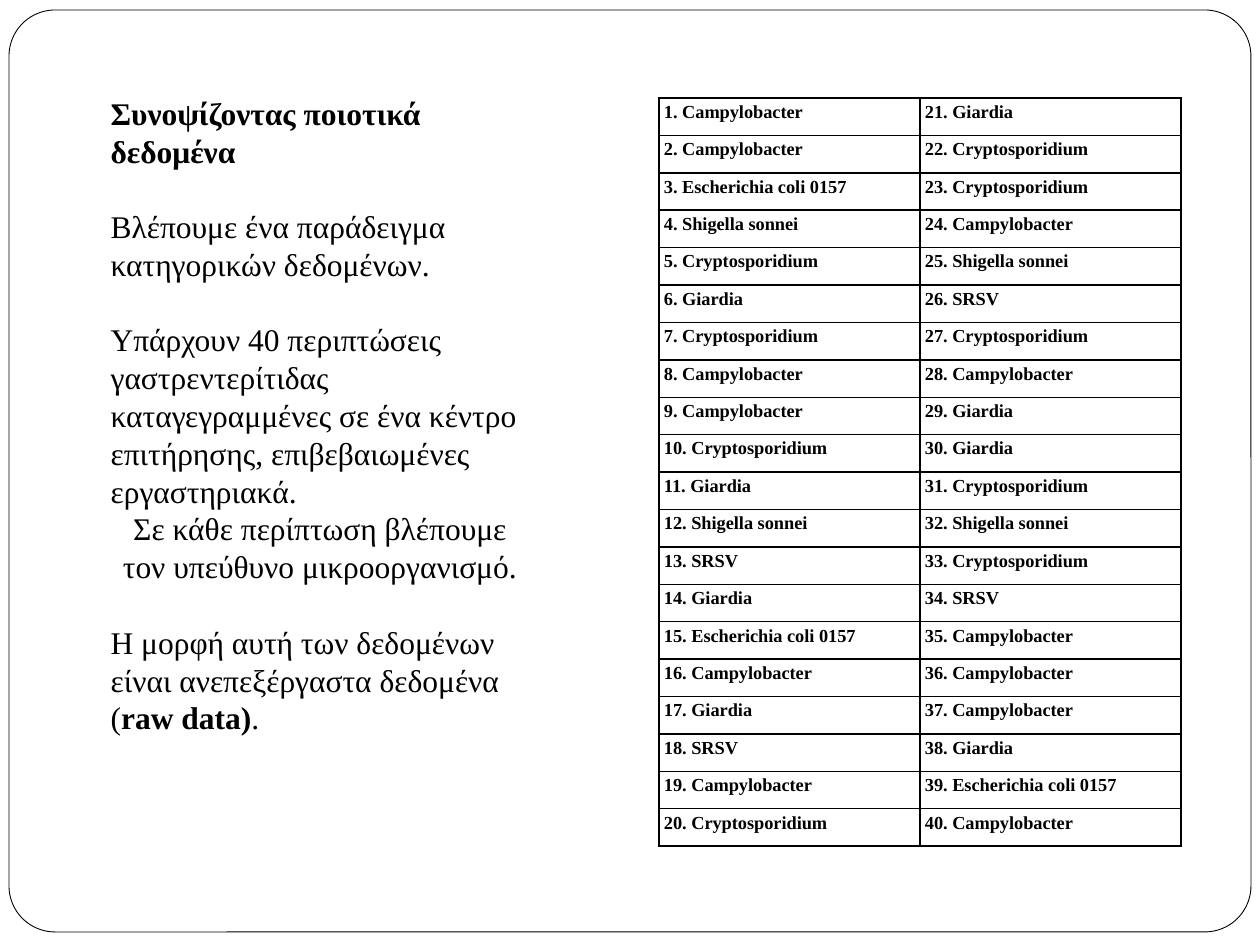
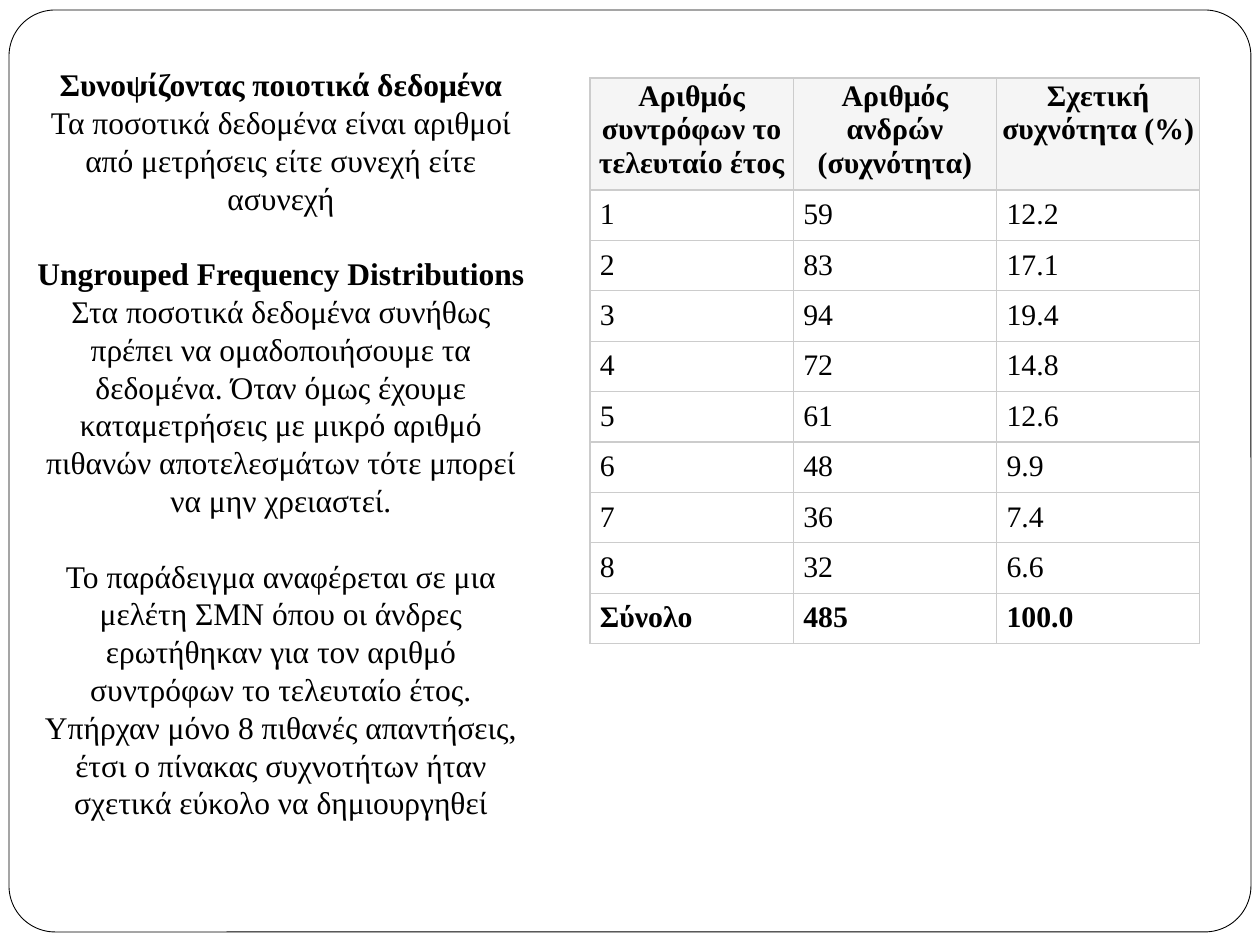
from lxml.etree import SubElement
from pptx import Presentation
from pptx.dml.color import RGBColor
from pptx.enum.shapes import MSO_SHAPE
from pptx.enum.text import MSO_ANCHOR, MSO_AUTO_SIZE, PP_ALIGN
from pptx.oxml.ns import qn
from pptx.util import Pt

PX = 914400 / 126
FONT = "Times New Roman"
PITCH = Pt(21.6)
HUES = {"ink": "000000", "paper": "FFFFFF", "grid": "CCCCCC", "head": "F5F5F5"}
TINT = {name: RGBColor.from_string(code) for name, code in HUES.items()}
LEFT, MID = PP_ALIGN.LEFT, PP_ALIGN.CENTER


def px(num):
    return round(num * PX)


def style(para, size, align, bold):
    para.alignment = align
    para.font.name = FONT
    para.font.size = Pt(size)
    para.font.bold = bold
    para.font.color.rgb = TINT["ink"]


germs = {"C": "Campylobacter", "E": "Escherichia coli 0157", "S": "Shigella sonnei",
         "Y": "Cryptosporidium", "G": "Giardia", "V": "SRSV"}
cases = [f"{num}. {germs[key]}" for num, key in
         enumerate("CCESYGYCCYGSVGECGVCYGYYCSVYCGGYSYVCCCGEC", 1)]
men = [59, 83, 94, 72, 61, 48, 36, 32]
total = sum(men)
freq = [["Αριθμός συντρόφων το τελευταίο έτος", "Αριθμός ανδρών (συχνότητα)",
         "Σχετική συχνότητα (%)"]]
freq += [[str(num), str(count), f"{count / total * 100:.1f}"]
         for num, count in enumerate(men, 1)]
freq.append(["Σύνολο", str(total), "100.0"])

pages = [
    {
        "title": (98, 94, 444, 76), "body": (98, 207, 444, 612), "align": LEFT,
        "text": [
            ("Βλέπουμε ένα παράδειγμα κατηγορικών δεδομένων.", LEFT, False),
            ("Υπάρχουν 40 περιπτώσεις γαστρεντερίτιδας καταγεγραμμένες σε ένα "
             "κέντρο επιτήρησης, επιβεβαιωμένες εργαστηριακά.", LEFT, True),
            ("Σε κάθε περίπτωση βλέπουμε τον υπεύθυνο μικροοργανισμό.", MID, False),
            ("Η μορφή αυτή των δεδομένων είναι ανεπεξέργαστα δεδομένα "
             "(*raw data)*.", LEFT, True),
        ],
        "rows": list(zip(cases[:20], cases[20:])), "grid": (659, 98, 522, 749),
        "size": 10.5, "pad": (5, 4), "line": ("ink", 1), "head": 0,
    },
    {
        "title": (20, 65, 522, 38), "body": (20, 103, 522, 803), "align": MID,
        "text": [
            ("Τα ποσοτικά δεδομένα είναι αριθμοί από μετρήσεις είτε συνεχή "
             "είτε ασυνεχή", MID, False),
            ("*Ungrouped Frequency Distributions*", MID, True),
            ("Στα ποσοτικά δεδομένα συνήθως πρέπει να ομαδοποιήσουμε τα δεδομένα. "
             "Όταν όμως έχουμε καταμετρήσεις με μικρό αριθμό πιθανών "
             "αποτελεσμάτων τότε μπορεί να μην χρειαστεί.", MID, False),
            ("Το παράδειγμα αναφέρεται σε μια μελέτη ΣΜΝ όπου οι άνδρες "
             "ερωτήθηκαν για τον αριθμό συντρόφων το τελευταίο έτος. Υπήρχαν "
             "μόνο 8 πιθανές απαντήσεις, έτσι ο πίνακας συχνοτήτων ήταν σχετικά "
             "εύκολο να δημιουργηθεί", MID, True),
        ],
        "rows": freq, "grid": (590, 78, 610, 566),
        "size": 17, "pad": (10, 8), "line": ("grid", 0.75), "head": 112,
    },
]

deck = Presentation()
deck.slide_width, deck.slide_height = px(1260), px(945)

for page in pages:
    slide = deck.slides.add_slide(deck.slide_layouts[1])

    if page is pages[0]:
        frame = slide.shapes.add_shape(MSO_SHAPE.ROUNDED_RECTANGLE,
                                       px(9), px(10), px(1242), px(922))
        frame.adjustments[0] = 0.05
        frame.shadow.inherit = False
        frame.fill.solid()
        frame.fill.fore_color.rgb = TINT["paper"]
        frame.line.color.rgb = TINT["ink"]
        frame.line.width = Pt(0.5)
        node = frame._element
        node.nvSpPr.cNvPr.set("id", "100")
        deck.slide_master.shapes._spTree.insert(2, node)

    head = [("*" + "Συνοψίζοντας ποιοτικά δεδομένα" + "*", page["align"], False)]
    title, body = slide.placeholders
    for holder, box, lines in ((title, page["title"], head),
                               (body, page["body"], page["text"])):
        holder.left, holder.top, holder.width, holder.height = map(px, box)
        text = holder.text_frame
        text.word_wrap = True
        text.auto_size = MSO_AUTO_SIZE.NONE
        text.vertical_anchor = MSO_ANCHOR.TOP
        text.margin_top = text.margin_bottom = 0
        for pos, (words, align, gap) in enumerate(lines):
            para = text.add_paragraph() if pos else text.paragraphs[0]
            props = para._p.get_or_add_pPr()
            props.set("marL", "0")
            props.set("indent", "0")
            SubElement(props, qn("a:buNone"))
            para.line_spacing = PITCH
            para.space_before = PITCH if gap else 0
            style(para, 18, align, False)
            for part, piece in enumerate(words.split("*")):
                if piece:
                    run = para.add_run()
                    run.text = piece
                    run.font.bold = part % 2 == 1

    rows = page["rows"]
    table = slide.shapes.add_table(len(rows), len(rows[0]),
                                   *map(px, page["grid"])).table
    table.first_row = table.horz_banding = False
    if page["head"]:
        rest = page["grid"][3] - page["head"]
        for row in table.rows:
            row.height = px(rest) // (len(rows) - 1)
        table.rows[0].height = px(page["head"])
    hue, width = page["line"]
    for r, row in enumerate(rows):
        top = r == 0 and page["head"] > 0
        bold = not page["head"] or r in (0, len(rows) - 1)
        side, edge = (2, 2) if top else page["pad"]
        for c, words in enumerate(row):
            cell = table.cell(r, c)
            cell.text = words
            style(cell.text_frame.paragraphs[0], page["size"],
                  MID if top else LEFT, bold)
            cell.margin_left = cell.margin_right = px(side)
            cell.margin_top = cell.margin_bottom = px(edge)
            props = cell._tc.get_or_add_tcPr()
            for tag in ("a:lnL", "a:lnR", "a:lnT", "a:lnB"):
                line = SubElement(props, qn(tag), w=str(Pt(width)))
                fill = SubElement(line, qn("a:solidFill"))
                SubElement(fill, qn("a:srgbClr"), val=HUES[hue])
            cell.fill.solid()
            cell.fill.fore_color.rgb = TINT["head" if top else "paper"]

deck.save("out.pptx")
